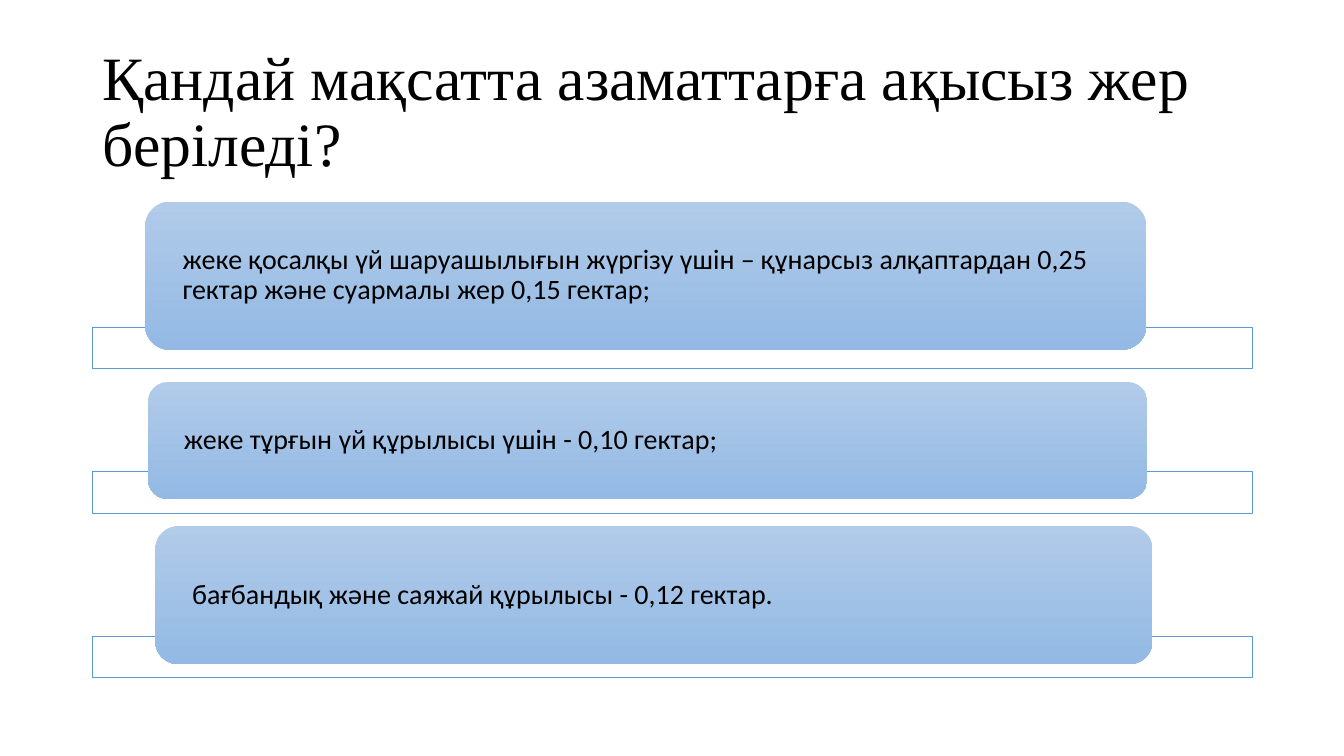
from dataclasses import dataclass

from lxml.etree import SubElement
from pptx import Presentation
from pptx.dml.color import RGBColor
from pptx.enum.shapes import MSO_SHAPE as Shape
from pptx.enum.text import MSO_ANCHOR as Anchor, PP_ALIGN as Align
from pptx.oxml.ns import qn
from pptx.util import Emu, Inches, Pt


@dataclass(frozen=True)
class Theme:
    """Colours, fonts and sizes of the slide."""
    text: str = "000000"
    bar_fill: str = "FFFFFF"
    bar_opacity: int = 90
    bar_line: str = "5B9BD5"
    card_top: str = "B1CBE9"
    card_bottom: str = "93B9E4"
    title_font: str = "Times New Roman"
    body_font: str = "Calibri"
    title_size: int = 44
    body_size: int = 20


@dataclass(frozen=True)
class Box:
    """A rectangle in columns and rows of the slide grid."""
    left: float
    top: float
    width: float
    height: float

    def place(self):
        """Return left, top, width and height as slide lengths."""
        return (Emu(round(self.left * COLUMN)), Emu(round(self.top * ROW)),
                Emu(round(self.width * COLUMN)), Emu(round(self.height * ROW)))


THEME = Theme()
SLIDE_WIDTH, SLIDE_HEIGHT = Inches(13.33), Inches(7.5)
COLUMN, ROW = SLIDE_WIDTH / 100, SLIDE_HEIGHT / 100
LEFT, WIDTH = 6.9, 86.25
TITLE = "Қандай мақсатта азаматтарға ақысыз жер беріледі?"
TITLE_BOX = Box(LEFT, 5.33, WIDTH, 19.33)
LIST_TOP, ROW_GAP, BAR_HEIGHT = 26.67, 1.73, 5.47
PURPOSES = [
    ("жеке қосалқы үй шаруашылығын жүргізу үшін – құнарсыз алқаптардан 0,25 "
     "гектар және суармалы жер 0,15 гектар;", 22.13, Box(3.9, 0, 74.5, 19.6)),
    ("жеке тұрғын үй құрылысы үшін - 0,10 гектар;", 17.33, Box(4.12, 0, 74.35, 15.47)),
    ("бағбандық және саяжай құрылысы - 0,12 гектар.", 20, Box(4.65, 0, 74.2, 18.27)),
]


def write_text(shape, text, font_name, size):
    """Write one left-aligned, vertically centred paragraph."""
    frame = shape.text_frame
    frame.word_wrap = True
    frame.vertical_anchor = Anchor.MIDDLE
    frame.text = text
    paragraph = frame.paragraphs[0]
    paragraph.alignment = Align.LEFT
    paragraph.line_spacing = 0.9
    font = paragraph.runs[0].font
    font.name, font.size = font_name, Pt(size)
    font.color.rgb = RGBColor.from_string(THEME.text)


def add_title(slide, box):
    """Add the slide title."""
    title = slide.shapes.add_textbox(*box.place())
    write_text(title, TITLE, THEME.title_font, THEME.title_size)


def add_bar(slide, box):
    """Add the thin outlined bar behind a card."""
    bar = slide.shapes.add_shape(Shape.RECTANGLE, *box.place())
    bar.shadow.inherit = False
    bar.fill.solid()
    bar.fill.fore_color.rgb = RGBColor.from_string(THEME.bar_fill)
    color = bar.fill._xPr.find(qn("a:solidFill"))[0]
    SubElement(color, qn("a:alpha")).set("val", str(THEME.bar_opacity * 1000))
    bar.line.color.rgb = RGBColor.from_string(THEME.bar_line)
    bar.line.width = Pt(0.5)


def add_card(slide, box, text):
    """Add a rounded gradient card with its text."""
    card = slide.shapes.add_shape(Shape.ROUNDED_RECTANGLE, *box.place())
    card.shadow.inherit = False
    card.line.fill.background()
    card.fill.gradient()
    card.fill.gradient_angle = 270
    for stop, color in zip(card.fill.gradient_stops, (THEME.card_top, THEME.card_bottom)):
        stop.color.rgb = RGBColor.from_string(color)
    frame = card.text_frame
    frame.margin_left = frame.margin_right = Inches(0.3)
    frame.margin_top = frame.margin_bottom = 0
    write_text(card, text, THEME.body_font, THEME.body_size)


def add_purpose(slide, box, text, card):
    """Add a list row: a bar along its bottom and a card over it."""
    add_bar(slide, Box(box.left, box.top + box.height - BAR_HEIGHT, box.width, BAR_HEIGHT))
    add_card(slide, Box(box.left + card.left, box.top + card.top, card.width, card.height), text)


def add_purposes(slide, left, top, width):
    """Stack the list rows with equal gaps."""
    for text, height, card in PURPOSES:
        add_purpose(slide, Box(left, top, width, height), text, card)
        top += height + ROW_GAP


def main():
    """Build and save the presentation."""
    presentation = Presentation()
    presentation.slide_width, presentation.slide_height = SLIDE_WIDTH, SLIDE_HEIGHT
    slide = presentation.slides.add_slide(presentation.slide_layouts[6])
    add_title(slide, TITLE_BOX)
    add_purposes(slide, LEFT, LIST_TOP, WIDTH)
    presentation.save("out.pptx")


if __name__ == "__main__":
    main()
